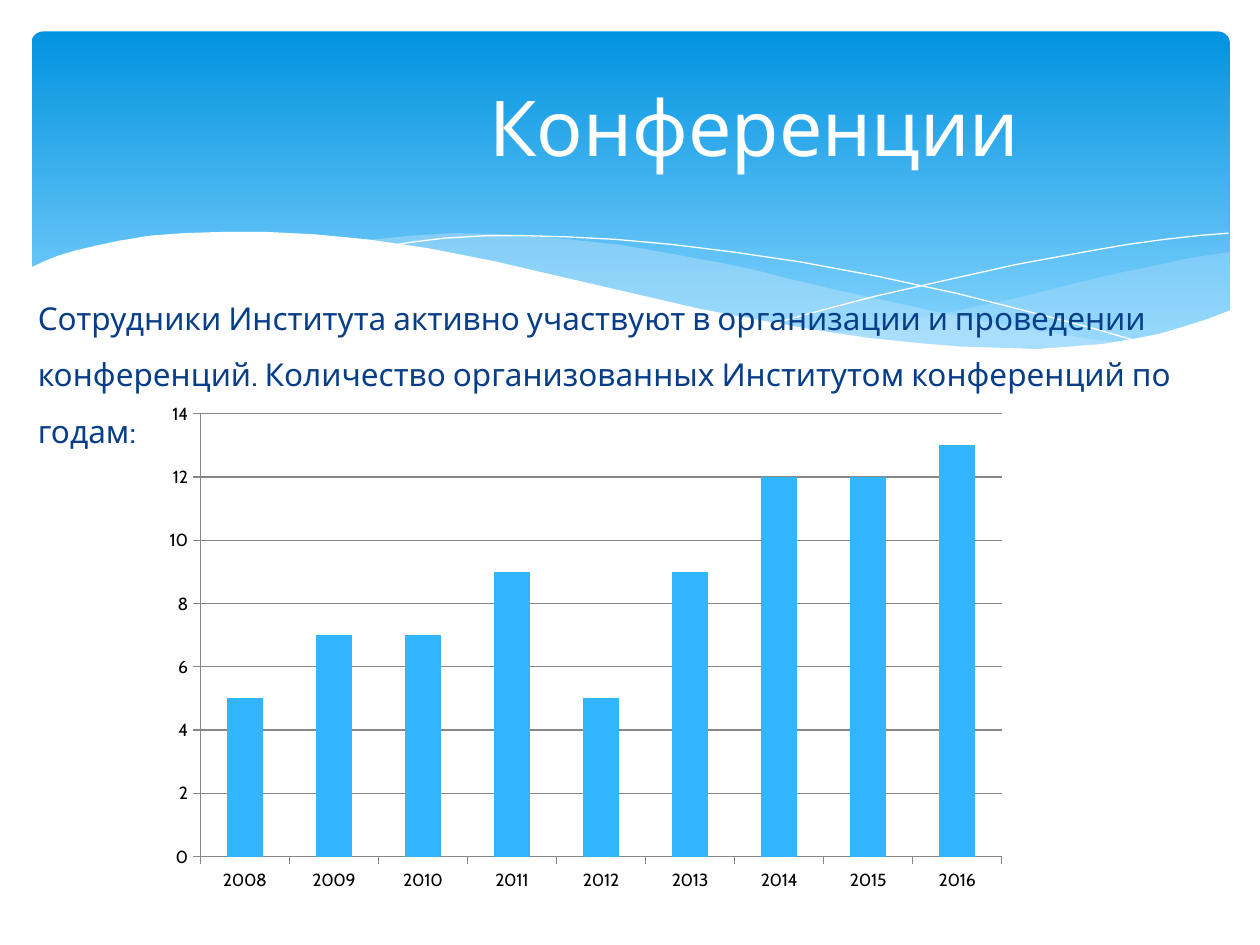
from lxml import etree
from pptx import Presentation
from pptx.chart.data import CategoryChartData
from pptx.dml.color import RGBColor
from pptx.enum.chart import XL_CHART_TYPE as ChartType, XL_TICK_MARK as TickMark
from pptx.enum.shapes import MSO_SHAPE as Shape
from pptx.enum.text import MSO_ANCHOR as Anchor, MSO_AUTO_SIZE as AutoSize, PP_ALIGN as Align
from pptx.oxml.ns import qn
from pptx.util import Inches, Pt

WHITE = RGBColor(0xFF, 0xFF, 0xFF)
BLACK = RGBColor(0, 0, 0)
NAVY = RGBColor(0x07, 0x3E, 0x87)
BAR_BLUE = RGBColor(0x31, 0xB6, 0xFD)
BANNER_TOP = RGBColor(0x02, 0x93, 0xE0)
BANNER_BOTTOM = RGBColor(0x83, 0xD3, 0xFE)
PALE_BLUE = RGBColor(0xC6, 0xE7, 0xFC)
GRID_GREY = RGBColor(0x87, 0x87, 0x87)
FONT = "Cabin"

# Wave outlines, in hundredths of an inch
RIGHT_WAVE = [
    (976, 200), (948, 204), (921, 210), (891, 216), (861, 223), (805, 237),
    (753, 248), (706, 257), (661, 265), (691, 269), (719, 272), (745, 275),
    (769, 277), (803, 278), (835, 277), (863, 275), (889, 272), (913, 267),
    (935, 262), (949, 257), (976, 247)]
MIDDLE_WAVE = [
    (893, 273), (866, 269), (807, 260), (741, 247), (668, 231), (629, 222),
    (598, 214), (569, 208), (541, 203), (514, 198), (489, 194), (442, 189),
    (399, 186), (361, 185), (328, 187), (286, 191), (323, 196), (362, 203),
    (404, 211), (449, 222), (530, 240), (601, 255), (650, 264), (695, 270),
    (736, 275), (773, 277), (807, 278), (838, 278), (867, 276), (893, 273)]
WHITE_WAVE = [
    (977, 246), (959, 253), (940, 259), (920, 265), (899, 269), (875, 273),
    (850, 275), (823, 277), (793, 276), (761, 275), (726, 272), (688, 268),
    (648, 262), (603, 254), (555, 245), (503, 233), (447, 220), (391, 207),
    (340, 197), (292, 190), (250, 186), (211, 184), (177, 184), (146, 185),
    (119, 187), (95, 191), (76, 195), (59, 199), (46, 203), (36, 207),
    (23, 213), (23, 329), (977, 329)]
FALLING_LINE = [
    (309, 195), (328, 192), (353, 189), (387, 187), (416, 187), (450, 188),
    (489, 190), (533, 194), (582, 200), (636, 208), (695, 219), (760, 233),
    (831, 251), (869, 261), (907, 272)]
RISING_LINE = [
    (613, 257), (653, 246), (695, 235), (748, 223), (806, 210), (866, 199),
    (895, 194), (924, 190), (951, 187), (975, 185)]


def add_wave(page, points, closed):
    builder = page.shapes.build_freeform(*points[0], scale=Inches(0.01))
    builder.add_line_segments(points[1:], close=closed)
    wave = builder.convert_to_shape()
    wave.shadow.inherit = False
    return wave


deck = Presentation()
deck.slide_width, deck.slide_height = Inches(10), Inches(7.5)
page = deck.slides.add_slide(deck.slide_layouts[1])
title, body = page.placeholders

# Gradient banner
banner = page.shapes.add_shape(
    Shape.ROUNDED_RECTANGLE, Inches(0.25), Inches(0.25), Inches(9.51), Inches(2.7))
banner.adjustments[0] = 0.034
banner.shadow.inherit = False
banner.line.fill.background()
banner.fill.gradient()
banner.fill.gradient_angle = 270
stops = [(0, BANNER_TOP), (0.9, BANNER_BOTTOM)]
for stop, (position, color) in zip(banner.fill.gradient_stops, stops):
    stop.position = position
    stop.color.rgb = color

# Translucent waves, thin lines, then the white wave over them
for points, opacity in [(RIGHT_WAVE, 29), (MIDDLE_WAVE, 40)]:
    wave = add_wave(page, points, True)
    wave.line.fill.background()
    wave.fill.solid()
    wave.fill.fore_color.rgb = PALE_BLUE
    color = wave.fill._xPr.find(qn("a:solidFill"))[0]
    etree.SubElement(color, qn("a:alpha")).set("val", str(opacity * 1000))

for points in [FALLING_LINE, RISING_LINE]:
    wave = add_wave(page, points, False)
    wave.fill.background()
    wave.line.color.rgb = WHITE
    wave.line.width = Pt(0)

wave = add_wave(page, WHITE_WAVE, True)
wave.line.fill.background()
wave.fill.solid()
wave.fill.fore_color.rgb = WHITE

# Bring both placeholders in front of the banner
for box in (body, title):
    page.shapes._spTree.append(box._element)

# Body text
body.left, body.top, body.width, body.height = (
    Inches(0.2), Inches(1.82), Inches(9.61), Inches(5.35))
frame = body.text_frame
frame.auto_size = AutoSize.NONE
frame.margin_top = Inches(0.4)
frame.text = ("Сотрудники Института активно участвуют в организации и проведении "
              "конференций. Количество организованных Институтом конференций по годам:")
para = frame.paragraphs[0]
para.line_spacing = 1.5
para.space_before = Pt(0)
para.font.name, para.font.size = FONT, Pt(18)
para.font.color.rgb = NAVY
properties = para._p.get_or_add_pPr()
properties.set("marL", "0")
properties.set("indent", "0")
bullet = etree.Element(qn("a:buNone"))
properties.find(qn("a:spcBef")).addnext(bullet)

# Title
title.left, title.top, title.width, title.height = (
    Inches(2.6), Inches(0.33), Inches(6.78), Inches(1.33))
frame = title.text_frame
frame.auto_size = AutoSize.NONE
frame.vertical_anchor = Anchor.MIDDLE
frame.text = "Конференции"
para = frame.paragraphs[0]
para.alignment = Align.CENTER
para.font.name, para.font.size = FONT, Pt(44)
para.font.color.rgb = WHITE

# Conferences per year
data = CategoryChartData()
data.categories = [str(year) for year in range(2008, 2017)]
data.add_series("Series 1", [5, 7, 7, 9, 5, 9, 12, 12, 13])
chart = page.shapes.add_chart(
    ChartType.COLUMN_CLUSTERED, Inches(1.24), Inches(3.2), Inches(6.99), Inches(4.09),
    data).chart
chart.has_legend = False
chart.has_title = False
chart.font.name, chart.font.size = FONT, Pt(10)
chart.font.color.rgb = BLACK

plot = chart.plots[0]
plot.gap_width = 150
plot.vary_by_categories = False
bars = plot.series[0].format.fill
bars.solid()
bars.fore_color.rgb = BAR_BLUE

for axis in (chart.category_axis, chart.value_axis):
    axis.major_tick_mark = TickMark.OUTSIDE
    axis.minor_tick_mark = TickMark.NONE
    axis.format.line.color.rgb = GRID_GREY
axis = chart.value_axis
axis.minimum_scale, axis.maximum_scale, axis.major_unit = 0, 14, 2
axis.has_major_gridlines = True
axis.major_gridlines.format.line.color.rgb = GRID_GREY

# Fixed inner plot area
area = chart._chartSpace.chart.plotArea
for old in area.findall(qn("c:layout")):
    area.remove(old)
layout = etree.Element(qn("c:layout"))
area.insert(0, layout)
manual = etree.SubElement(layout, qn("c:manualLayout"))
for tag, value in [("layoutTarget", "inner"), ("xMode", "edge"), ("yMode", "edge"),
                   ("x", "0.05"), ("y", "0.02"), ("w", "0.91"), ("h", "0.86")]:
    etree.SubElement(manual, qn(f"c:{tag}")).set("val", value)

deck.save("out.pptx")
